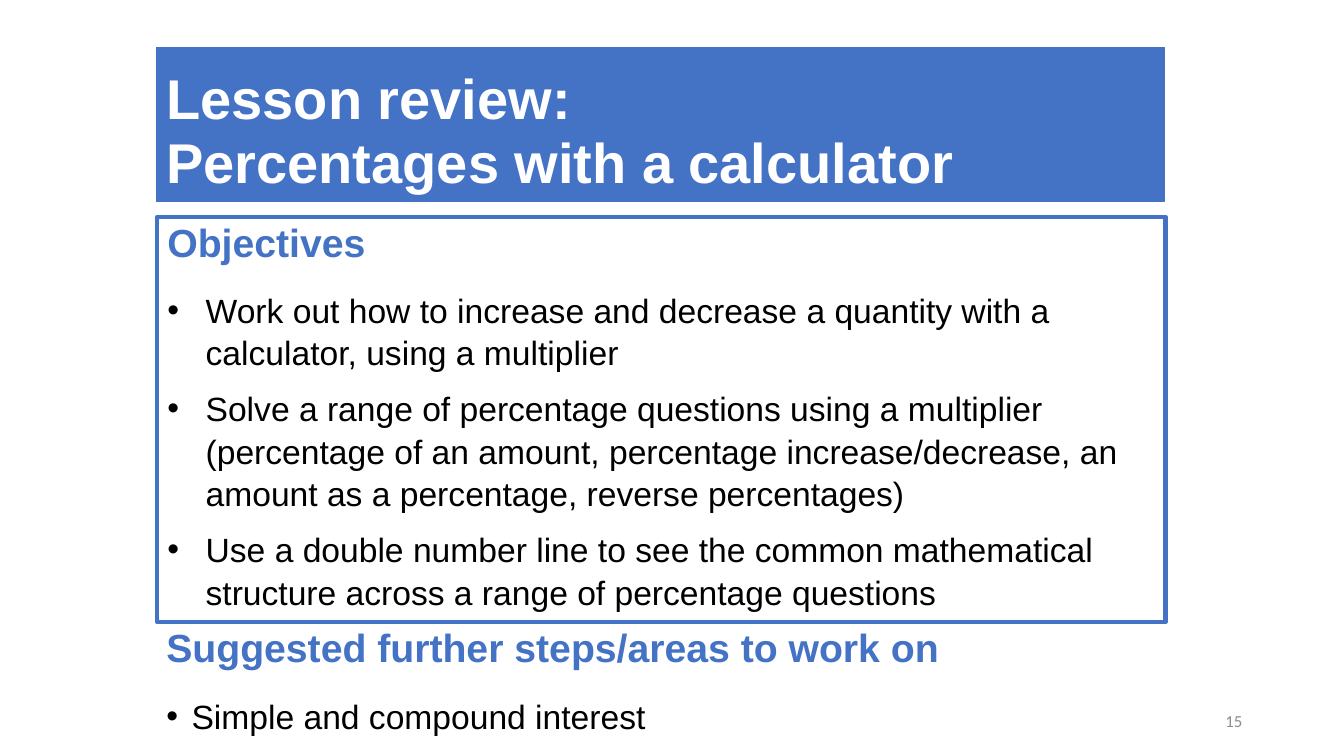
from pptx import Presentation
from pptx.dml.color import RGBColor
from pptx.enum.text import MSO_ANCHOR, MSO_AUTO_SIZE, PP_ALIGN
from pptx.oxml.xmlchemy import OxmlElement
from pptx.util import Inches, Pt

BLUE = RGBColor(0x44, 0x72, 0xC4)
WHITE = RGBColor(0xFF, 0xFF, 0xFF)
BLACK = RGBColor(0x00, 0x00, 0x00)
GRAY = RGBColor(0x8C, 0x8C, 0x8C)

OBJECTIVES = [
    "Work out how to increase and decrease a quantity with a calculator, using a multiplier",
    "Solve a range of percentage questions using a multiplier (percentage of an amount, "
    "percentage increase/decrease, an amount as a percentage, reverse percentages)",
    "Use a double number line to see the common mathematical structure across a range of "
    "percentage questions",
]
FURTHER_STEPS = ["Simple and compound interest"]


def place(shape, left, top, width, height):
    shape.left, shape.top = Inches(left), Inches(top)
    shape.width, shape.height = Inches(width), Inches(height)


def prepare_text(shape, anchor):
    frame = shape.text_frame
    frame.word_wrap = True
    frame.auto_size = MSO_AUTO_SIZE.NONE
    frame.vertical_anchor = anchor
    return frame


def format_paragraph(paragraph, size, color, bold=False, name="Arial"):
    paragraph.font.name = name
    paragraph.font.size = Pt(size)
    paragraph.font.bold = bold
    paragraph.font.color.rgb = color


def set_bullet(paragraph, indent):
    properties = paragraph._p.get_or_add_pPr()
    properties.set("marL", str(Inches(indent)))
    properties.set("indent", str(-Inches(indent)))
    if indent:
        bullet = OxmlElement("a:buChar")
        bullet.set("char", "•")
    else:
        bullet = OxmlElement("a:buNone")
    properties.insert_element_before(bullet, "a:tabLst", "a:defRPr", "a:extLst")


def space_paragraph(paragraph, line_spacing, after):
    paragraph.line_spacing = line_spacing
    paragraph.space_before = Pt(10)
    paragraph.space_after = Pt(after)


def fill_title(title, text):
    place(title, 1.55, 0.47, 10, 1.53)
    title.fill.solid()
    title.fill.fore_color.rgb = BLUE
    title.line.color.rgb = BLUE
    title.line.width = Pt(0.75)
    paragraph = prepare_text(title, MSO_ANCHOR.BOTTOM).paragraphs[0]
    paragraph.text = text
    paragraph.alignment = PP_ALIGN.LEFT
    paragraph.line_spacing = 0.95
    format_paragraph(paragraph, 40, WHITE, bold=True)


def fill_section(body, heading, items, indent, item_spacing, item_after):
    frame = prepare_text(body, MSO_ANCHOR.TOP)
    paragraph = frame.paragraphs[0]
    paragraph.text = heading
    space_paragraph(paragraph, Pt(31), 6)
    set_bullet(paragraph, 0)
    format_paragraph(paragraph, 28, BLUE, bold=True)
    for item in items:
        paragraph = frame.add_paragraph()
        paragraph.text = item
        space_paragraph(paragraph, item_spacing, item_after)
        set_bullet(paragraph, indent)
        format_paragraph(paragraph, 24, BLACK)


def add_page_number(slide, number):
    box = slide.shapes.add_textbox(Inches(9.42), Inches(6.95), Inches(3), Inches(0.4))
    paragraph = prepare_text(box, MSO_ANCHOR.MIDDLE).paragraphs[0]
    paragraph.text = number
    paragraph.alignment = PP_ALIGN.RIGHT
    format_paragraph(paragraph, 12, GRAY, name="Calibri")


def main():
    presentation = Presentation()
    presentation.slide_width = Inches(13.33)
    presentation.slide_height = Inches(7.5)
    slide = presentation.slides.add_slide(presentation.slide_layouts.get_by_name("Two Content"))
    title, objectives, further_steps = list(slide.placeholders)[:3]

    fill_title(title, "Lesson review:\vPercentages with a calculator")

    place(objectives, 1.56, 2.15, 10, 4.02)
    objectives.line.color.rgb = BLUE
    objectives.line.width = Pt(3)
    fill_section(objectives, "Objectives", OBJECTIVES, 0.38, 1.05, 0)

    place(further_steps, 1.55, 6.17, 10.45, 1.18)
    fill_section(further_steps, "Suggested further steps/areas to work on",
                 FURTHER_STEPS, 0.25, Pt(31), 6)

    add_page_number(slide, "15")
    presentation.save("out.pptx")


if __name__ == "__main__":
    main()
